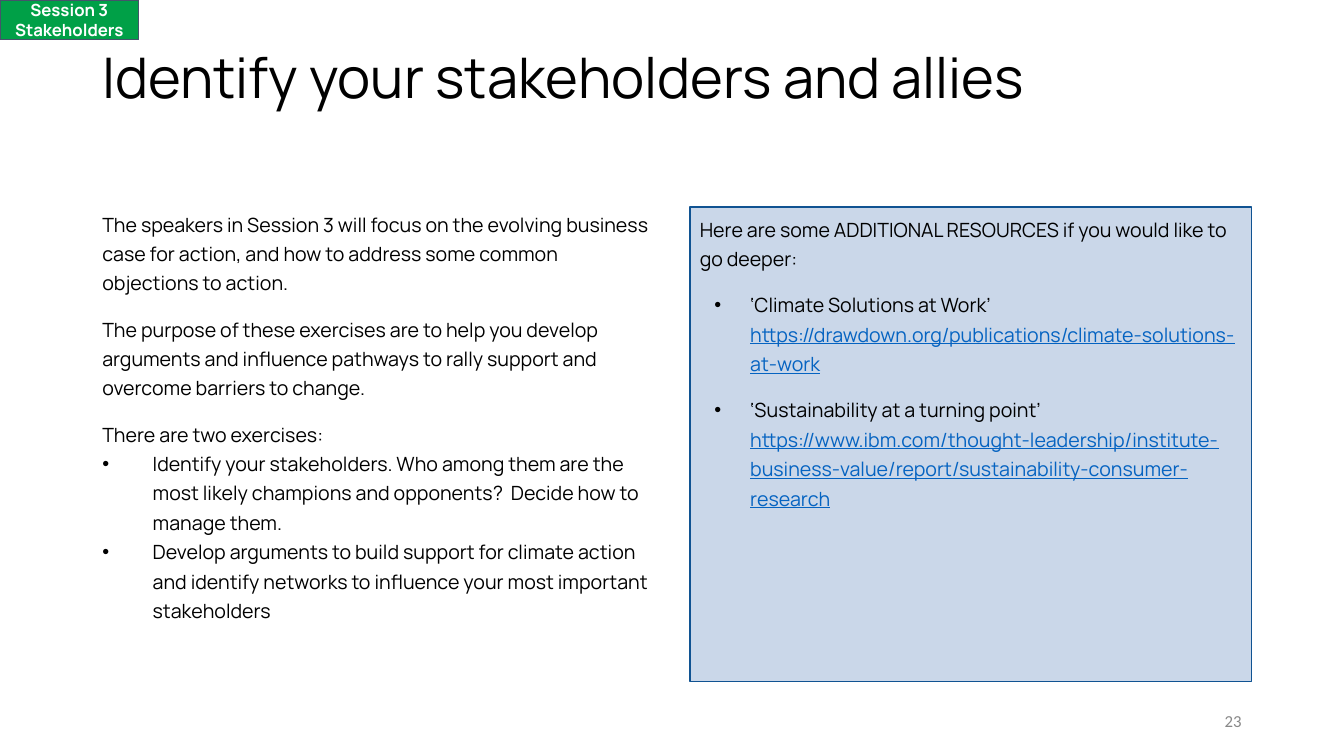
import pptx
import pptx.dml.color
import pptx.enum.shapes
import pptx.enum.text
import pptx.oxml
import pptx.oxml.ns
import pptx.util

PX = 9525  # EMU in one px, 96 px to the inch
COLORS = {
    "text": "000000",
    "link": "0563C1",
    "number": "888888",
    "white": "FFFFFF",
    "tag": "00A047",
    "tag line": "44546A",
    "panel": "97B1D5",
    "panel line": "105392",
}
ALIGN = pptx.enum.text.PP_ALIGN
ANCHOR = pptx.enum.text.MSO_ANCHOR


def rgb(name):
    return pptx.dml.color.RGBColor.from_string(COLORS[name])


def write(box, paragraphs, size, color="text", font="Manrope", bold=False,
          align=ALIGN.LEFT, anchor=ANCHOR.TOP, spacing=1.0):
    """Fill box with (space before in pt, (margin, hang) in px or None, spans).

    A span written as a link starts on a line of its own.
    """
    frame = box.text_frame
    frame.word_wrap = True
    frame.vertical_anchor = anchor
    for index, (before, bullet, spans) in enumerate(paragraphs):
        para = frame.paragraphs[0] if index == 0 else frame.add_paragraph()
        para.alignment = align
        para.line_spacing = spacing
        para.space_before = pptx.util.Pt(before)
        if bullet:
            margin, hang = bullet
            properties = para._p.get_or_add_pPr()
            properties.set("marL", str(margin * PX))
            properties.set("indent", str(-hang * PX))
            for tag, name, value in (("a:buFont", "typeface", "Arial"),
                                     ("a:buChar", "char", "•")):
                element = pptx.oxml.parse_xml(f"<{tag} {pptx.oxml.ns.nsdecls('a')}/>")
                element.set(name, value)
                properties.append(element)
        for text in spans:
            is_link = text.startswith("https://")
            if is_link:
                para.add_line_break()
            span = para.add_run()
            span.text = text
            span.font.name = font
            span.font.size = pptx.util.Pt(size)
            span.font.bold = bold
            span.font.underline = is_link
            span.font.color.rgb = rgb("link" if is_link else color)


deck = pptx.Presentation()
deck.slide_width, deck.slide_height = 1280 * PX, 720 * PX
page = deck.slides.add_slide(deck.slide_layouts[6])

# Title, introduction and page number
title = page.shapes.add_textbox(88 * PX, 36 * PX, 1104 * PX, 139 * PX)
write(title, [(0, None, ["Identify your stakeholders and allies"])], 40)

exercise_bullet = (48, 48)
introduction = page.shapes.add_textbox(88 * PX, 192 * PX, 544 * PX, 457 * PX)
write(introduction, [
    (0, None, ["The speakers in Session 3 will focus on the evolving business case for action, "
               "and how to address some common objections to action."]),
    (12, None, ["The purpose of these exercises are to help you develop arguments and influence "
                "pathways to rally support and overcome barriers to change."]),
    (12, None, ["There are two exercises:"]),
    (0, exercise_bullet, ["Identify your stakeholders. Who among them are the most likely "
                          "champions and opponents?  Decide how to manage them."]),
    (0, exercise_bullet, ["Develop arguments to build support for climate action and identify "
                          "networks to influence your most important stakeholders"]),
], 14, spacing=1.25)

number = page.shapes.add_textbox(904 * PX, 667 * PX, 288 * PX, 38 * PX)
write(number, [(0, None, ["23"])], 12, "number", "Calibri",
      align=ALIGN.RIGHT, anchor=ANCHOR.MIDDLE)

# Session tag and resources panel
rectangles = []
for left, top, width, height, fill, line, weight in (
    (0, 0, 132, 38, "tag", "tag line", 0.75),
    (657, 197, 535, 452, "panel", "panel line", 1),
):
    rectangle = page.shapes.add_shape(pptx.enum.shapes.MSO_SHAPE.RECTANGLE,
                                      left * PX, top * PX, width * PX, height * PX)
    rectangle.shadow.inherit = False
    rectangle.fill.solid()
    rectangle.fill.fore_color.rgb = rgb(fill)
    rectangle.line.color.rgb = rgb(line)
    rectangle.line.width = pptx.util.Pt(weight)
    rectangles.append(rectangle)
session_tag, resources = rectangles

write(session_tag, [(0, None, ["Session 3"]), (0, None, ["Stakeholders"])], 12, "white",
      bold=True, align=ALIGN.CENTER, anchor=ANCHOR.MIDDLE)

panel_color = resources.fill._xPr.find(".//" + pptx.oxml.ns.qn("a:srgbClr"))
panel_color.append(pptx.oxml.parse_xml(
    f'<a:alpha {pptx.oxml.ns.nsdecls("a")} val="50000"/>'))
resource_bullet = (48, 34)
write(resources, [
    (0, None, ["Here are some ADDITIONAL RESOURCES if you would like to go deeper:"]),
    (12, resource_bullet, ["‘Climate Solutions at Work’",
                           "https://drawdown.org/publications/climate-solutions-at-work"]),
    (12, resource_bullet, ["‘Sustainability at a turning point’",
                           "https://www.ibm.com/thought-leadership/institute-business-value/"
                           "report/sustainability-consumer-research"]),
], 14, spacing=1.25)

deck.save("out.pptx")
